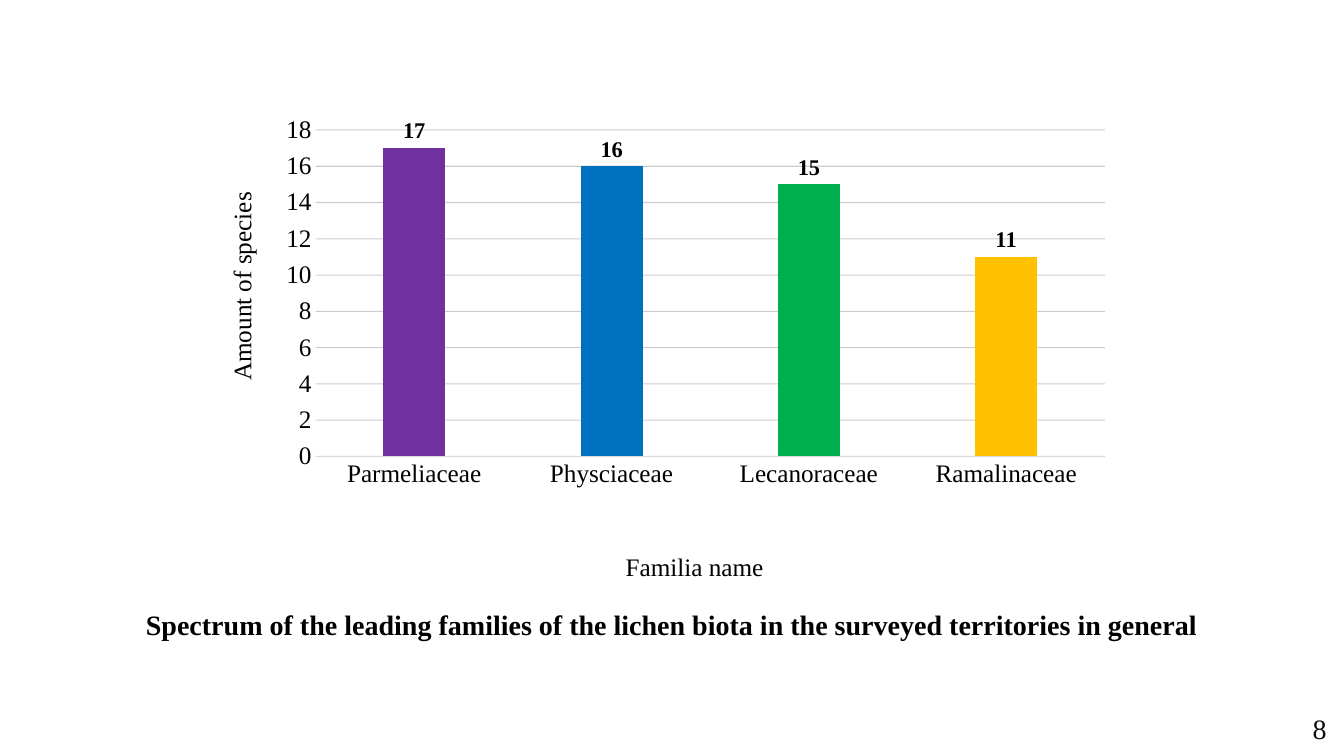
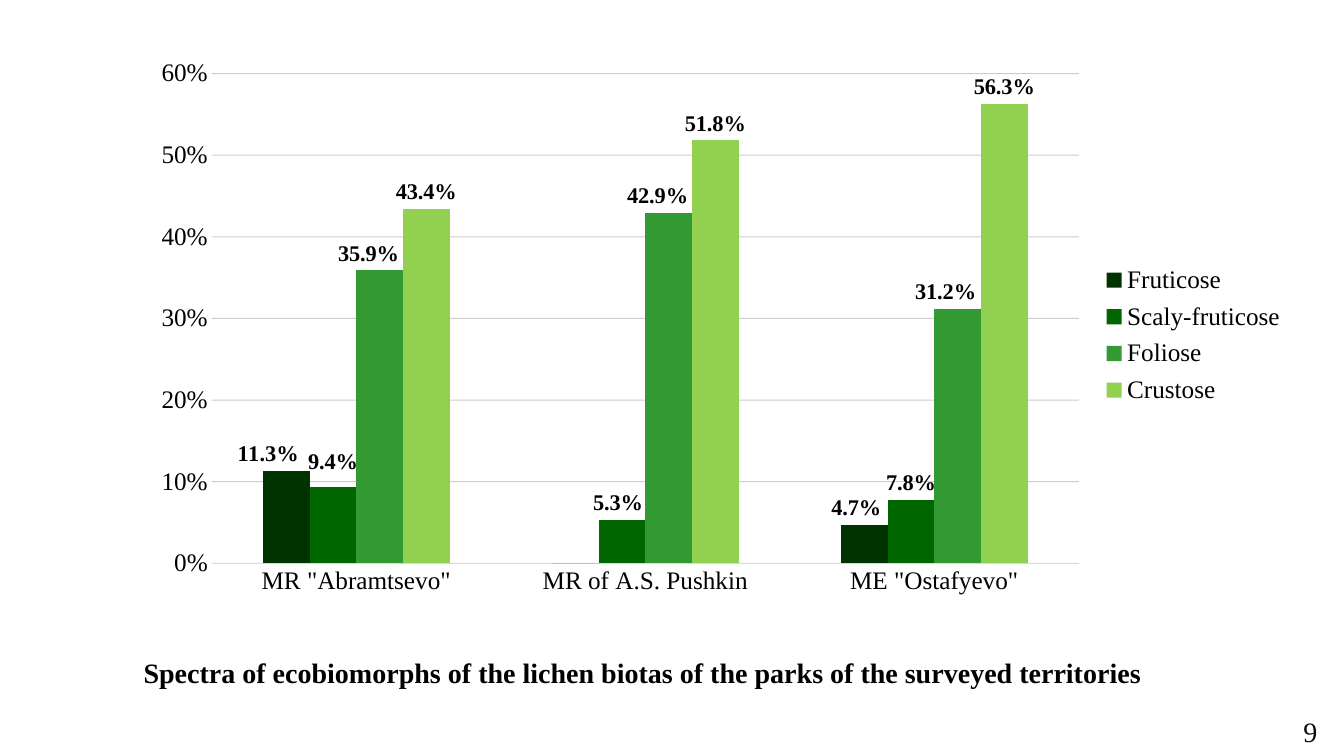
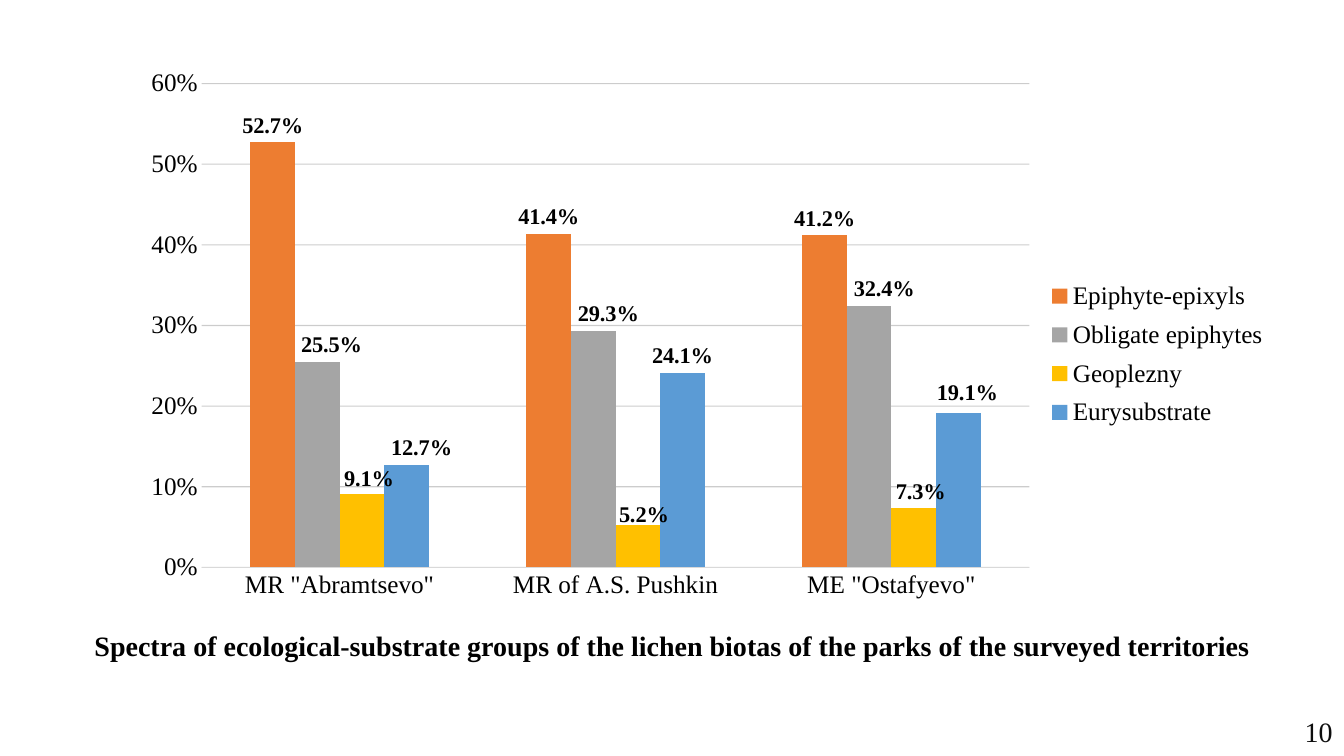
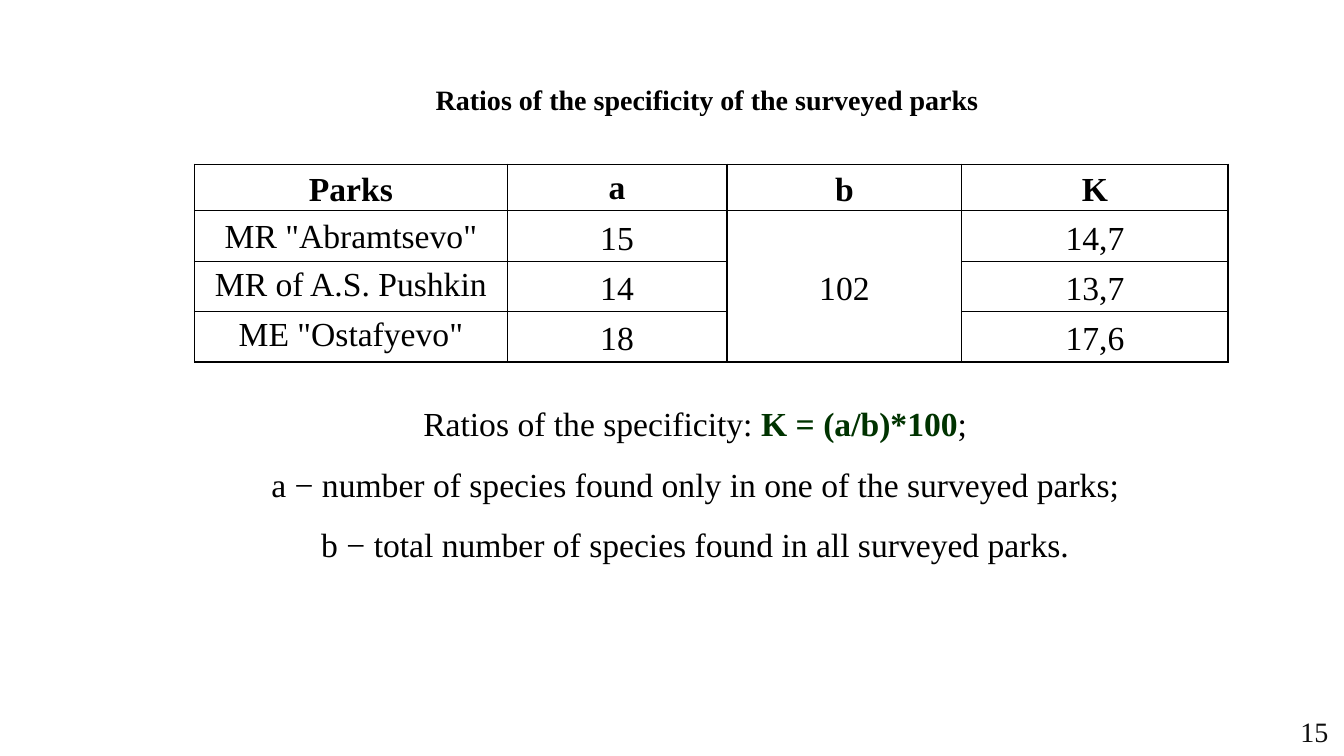
from dataclasses import dataclass, field

from lxml import etree
from pptx import Presentation
from pptx import util as u
from pptx.chart import data
from pptx.dml.color import RGBColor
from pptx.enum import chart as kinds
from pptx.enum import text
from pptx.oxml.ns import qn

BLACK = RGBColor(0x00, 0x00, 0x00)
INK = RGBColor(0x0D, 0x0D, 0x0D)
RULE = RGBColor(0xD9, 0xD9, 0xD9)
PURPLE = RGBColor(0x70, 0x30, 0xA0)
BLUE = RGBColor(0x00, 0x70, 0xC0)
GREEN = RGBColor(0x00, 0xB0, 0x50)
GOLD = RGBColor(0xFF, 0xC0, 0x00)
PINE = RGBColor(0x00, 0x33, 0x00)
MOSS = RGBColor(0x00, 0x66, 0x00)
FERN = RGBColor(0x33, 0x99, 0x33)
LIME = RGBColor(0x92, 0xD0, 0x50)
ORANGE = RGBColor(0xED, 0x7D, 0x31)
GREY = RGBColor(0xA5, 0xA5, 0xA5)
SKY = RGBColor(0x5B, 0x9B, 0xD5)

FACE = "Times New Roman"
SCALE = 9144
WIDE, HIGH = 1333, 750
PARKS = ['MR "Abramtsevo"', "MR of A.S. Pushkin", 'ME "Ostafyevo"']

Box = tuple[int, int, int, int]
Spot = tuple[int, int]


@dataclass
class Bars:
    name: str
    vals: list[float]
    fills: list[RGBColor]
    shifts: dict[int, Spot] = field(default_factory=dict)


@dataclass
class Graph:
    box: Box
    plot: Box
    cats: list[str]
    rows: list[Bars]
    top: float
    step: float
    form: str = "General"
    tags: str = "General"
    lap: int = 0
    key: Box | None = None
    names: tuple[tuple[str, Spot], ...] = ()


@dataclass
class Page:
    num: str
    left: int
    top: int
    head: str
    band: Box
    graph: Graph | None = None


def px(n: int) -> int:
    return u.Emu(n * SCALE)


def style(font, size: int, bold: bool = False, tint: RGBColor = BLACK) -> None:
    font.name, font.size, font.bold = FACE, u.Pt(size), bold
    font.color.rgb = tint


def write(slide, box: Box, words: str, size: int, bold: bool = False,
          tint: RGBColor = BLACK, align=text.PP_ALIGN.CENTER,
          anchor=text.MSO_ANCHOR.TOP) -> None:
    frame = slide.shapes.add_textbox(*map(px, box)).text_frame
    frame.word_wrap = True
    frame.vertical_anchor = anchor
    para = frame.paragraphs[0]
    para.text, para.alignment = words, align
    style(para.font, size, bold, tint)


def layout(host, slot: int, area: Box, spot: tuple[int, ...],
           edge: bool = True, inner: bool = False) -> None:
    for old in host.findall(qn("c:layout")):
        host.remove(old)
    node = etree.Element(qn("c:layout"))
    hand = etree.SubElement(node, qn("c:manualLayout"))
    if inner:
        etree.SubElement(hand, qn("c:layoutTarget")).set("val", "inner")
    if edge:
        for tag in ("c:xMode", "c:yMode"):
            etree.SubElement(hand, qn(tag)).set("val", "edge")
    for tag, part, whole in zip("xywh", spot, area[2:] * 2):
        etree.SubElement(hand, qn("c:" + tag)).set("val", str(part / whole))
    host.insert(slot, node)


def label(row, bars: Bars, graph: Graph) -> None:
    tags = row.data_labels
    tags.show_value = True
    tags.number_format, tags.number_format_is_linked = graph.tags, False
    tags.position = kinds.XL_LABEL_POSITION.OUTSIDE_END
    style(tags.font, 16, True)
    for spot, shift in sorted(bars.shifts.items()):
        tag = row.points[spot].data_label
        style(tag.font, 16, True)
        tag.position = kinds.XL_LABEL_POSITION.OUTSIDE_END
        node = tags._element.findall(qn("c:dLbl"))[-1]
        layout(node, 1, graph.box, shift, edge=False)
        form = etree.Element(qn("c:numFmt"))
        form.set("formatCode", graph.tags)
        form.set("sourceLinked", "0")
        node.insert(2, form)


def draw(slide, graph: Graph) -> None:
    source = data.CategoryChartData(number_format=graph.form)
    source.categories = graph.cats
    for bars in graph.rows:
        source.add_series(bars.name, bars.vals)
    chart = slide.shapes.add_chart(
        kinds.XL_CHART_TYPE.COLUMN_CLUSTERED, *map(px, graph.box), source).chart
    chart.has_title = False
    style(chart.font, 18)
    plot = chart.plots[0]
    plot.gap_width, plot.overlap, plot.vary_by_categories = 219, graph.lap, False

    for row, bars in zip(plot.series, graph.rows):
        row.invert_if_negative = False
        row.format.fill.solid()
        row.format.fill.fore_color.rgb = bars.fills[0]
        for spot, tint in enumerate(bars.fills[1:], 1):
            fill = row.points[spot].format.fill
            fill.solid()
            fill.fore_color.rgb = tint
        label(row, bars, graph)

    base, side = chart.category_axis, chart.value_axis
    for axis in (base, side):
        axis.major_tick_mark = axis.minor_tick_mark = kinds.XL_TICK_MARK.NONE
        axis.tick_labels.number_format = graph.form
        axis.tick_labels.number_format_is_linked = False
        style(axis.tick_labels.font, 18)
    base.format.line.color.rgb = RULE
    base.format.line.width = u.Pt(0.75)
    side.format.line.fill.background()
    side.minimum_scale, side.maximum_scale = 0, graph.top
    side.major_unit = graph.step
    side.has_major_gridlines = True
    grid = side.major_gridlines.format.line
    grid.color.rgb, grid.width = BLACK, u.Pt(0.75)
    for tint in side._element.find(qn("c:majorGridlines")).iter(qn("a:srgbClr")):
        etree.SubElement(tint, qn("a:alpha")).set("val", "20000")

    for axis, (words, spot), turn in zip((base, side), graph.names, (0, -5400000)):
        frame = axis.axis_title.text_frame
        frame.text = words
        style(frame.paragraphs[0].font, 18)
        body = frame._txBody.find(qn("a:bodyPr"))
        body.set("rot", str(turn))
        body.set("vert", "horz")
        layout(axis.axis_title._element, 1, graph.box, spot)

    chart.has_legend = graph.key is not None
    if graph.key:
        chart.legend.position = kinds.XL_LEGEND_POSITION.RIGHT
        chart.legend.include_in_layout = False
        style(chart.legend.font, 18)
        layout(chart.legend._element, 1, graph.box, graph.key)
    layout(chart._chartSpace.find(".//" + qn("c:plotArea")), 0,
           graph.box, graph.plot, inner=True)


def frame_cell(cell) -> None:
    props = cell._tc.get_or_add_tcPr()
    for slot, side in enumerate(("a:lnL", "a:lnR", "a:lnT", "a:lnB")):
        line = etree.Element(qn(side))
        line.set("w", str(u.Pt(1)))
        fill = etree.SubElement(line, qn("a:solidFill"))
        etree.SubElement(fill, qn("a:srgbClr")).set("val", str(BLACK))
        props.insert(slot, line)


def draw_table(slide) -> None:
    ratios = [("15", "102", "14,7"), ("14", "", "13,7"), ("18", "", "17,6")]
    rows = [("Parks", "a", "b", "K")]
    rows += [(park, *vals) for park, vals in zip(PARKS, ratios)]
    wides, highs = (310, 218, 233, 264), (46, 50, 50, 50)
    table = slide.shapes.add_table(
        len(rows), len(wides),
        *map(px, (193, 163, sum(wides), sum(highs)))).table
    table.first_row = table.horz_banding = False
    for col, wide in zip(table.columns, wides):
        col.width = px(wide)
    for row, high in zip(table.rows, highs):
        row.height = px(high)
    table.cell(1, 2).merge(table.cell(3, 2))
    for r, row in enumerate(rows):
        for c, words in enumerate(row):
            cell = table.cell(r, c)
            cell.fill.background()
            frame_cell(cell)
            cell.vertical_anchor = text.MSO_ANCHOR.MIDDLE
            para = cell.text_frame.paragraphs[0]
            para.text, para.alignment = words, text.PP_ALIGN.CENTER
            style(para.font, 24, r == 0)
            if r and c == 0:
                cell.vertical_anchor = (
                    text.MSO_ANCHOR.BOTTOM if r == 1 else text.MSO_ANCHOR.TOP)
            else:
                para.line_spacing = 1.15
                cell.margin_left = cell.margin_right = px(7)
                cell.margin_top = cell.margin_bottom = 0
    table.cell(0, 1).vertical_anchor = text.MSO_ANCHOR.TOP


def draw_notes(slide) -> None:
    lines = [
        ("Ratios of the specificity: ", "K = (a/b)*100", ";"),
        ("a − number of species found only in one of the surveyed parks;",),
        ("b − total number of species found in all surveyed parks.",),
    ]
    frame = slide.shapes.add_textbox(*map(px, (50, 375, 1230, 185))).text_frame
    frame.word_wrap = True
    for spot, parts in enumerate(lines):
        para = frame.add_paragraph() if spot else frame.paragraphs[0]
        para.alignment, para.line_spacing = text.PP_ALIGN.CENTER, 1.5
        para._p.get_or_add_pPr().set("indent", str(px(49)))
        for part in parts:
            para.add_run().text = part
        if len(parts) == 1:
            style(para.font, 24)
        else:
            for slot, run in enumerate(para.runs):
                strong = slot == 1
                style(run.font, 24, strong, PINE if strong else BLACK)


FAMILIES = Graph(
    (185, 45, 936, 553), (128, 84, 783, 324),
    ["Parmeliaceae", "Physciaceae", "Lecanoraceae", "Ramalinaceae"],
    [Bars("Series 1", [17, 16, 15, 11], [PURPLE, BLUE, GREEN, GOLD])],
    18, 2, lap=-27,
    names=(("Familia name", (431, 498)), ("Amount of species", (35, 141))))

FORMS = Graph(
    (144, 29, 1145, 616), (66, 44, 860, 486), PARKS,
    [Bars("Fruticose", [0.113, 0, 0.047], [PINE], {0: (-18, 0), 2: (-8, 0)}),
     Bars("Scaly-fruticose", [0.094, 0.053, 0.078], [MOSS],
          {0: (0, -8), 1: (-4, 0)}),
     Bars("Foliose", [0.359, 0.429, 0.312], [FERN],
          {0: (-11, 0), 1: (-11, 0), 2: (-12, 0)}),
     Bars("Crustose", [0.434, 0.518, 0.563], [LIME])],
    0.6, 0.1, "0%", "0.0%;;", key=(947, 226, 185, 155))

GROUPS = Graph(
    (131, 25, 1146, 661), (69, 58, 821, 480), PARKS,
    [Bars("Epiphyte-epixyls", [0.527, 0.414, 0.412], [ORANGE]),
     Bars("Obligate epiphytes", [0.255, 0.293, 0.324], [GREY],
          {0: (14, 0), 1: (15, 0), 2: (15, 0)}),
     Bars("Geoplezny", [0.091, 0.052, 0.073], [GOLD],
          {0: (7, 2), 1: (6, 6), 2: (7, 0)}),
     Bars("Eurysubstrate", [0.127, 0.241, 0.191], [SKY],
          {0: (15, 0), 2: (9, -4)})],
    0.6, 0.1, "0%", "0.0%", key=(906, 244, 222, 165))

PAGES = [
    Page("8", 1292, 708,
         "Spectrum of the leading families of the lichen biota "
         "in the surveyed territories in general",
         (46, 598, 1241, 44), FAMILIES),
    Page("9", 1283, 711,
         "Spectra of ecobiomorphs of the lichen biotas of the parks "
         "of the surveyed territories",
         (74, 645, 1127, 44), FORMS),
    Page("10", 1284, 711,
         "Spectra of ecological-substrate groups of the lichen biotas "
         "of the parks of the surveyed territories",
         (10, 619, 1314, 44), GROUPS),
    Page("15", 1280, 711, "Ratios of the specificity of the surveyed parks",
         (193, 77, 1017, 44)),
]


def main() -> None:
    deck = Presentation()
    deck.slide_width, deck.slide_height = px(WIDE), px(HIGH)
    for page in PAGES:
        slide = deck.slides.add_slide(deck.slide_layouts[6])
        if page.graph:
            draw(slide, page.graph)
        else:
            draw_table(slide)
            draw_notes(slide)
        write(slide, page.band, page.head, 20, True)
        write(slide, (page.left, page.top, WIDE - page.left, 30), page.num, 20,
              tint=INK, align=text.PP_ALIGN.LEFT, anchor=text.MSO_ANCHOR.MIDDLE)
    deck.save("out.pptx")


if __name__ == "__main__":
    main()
